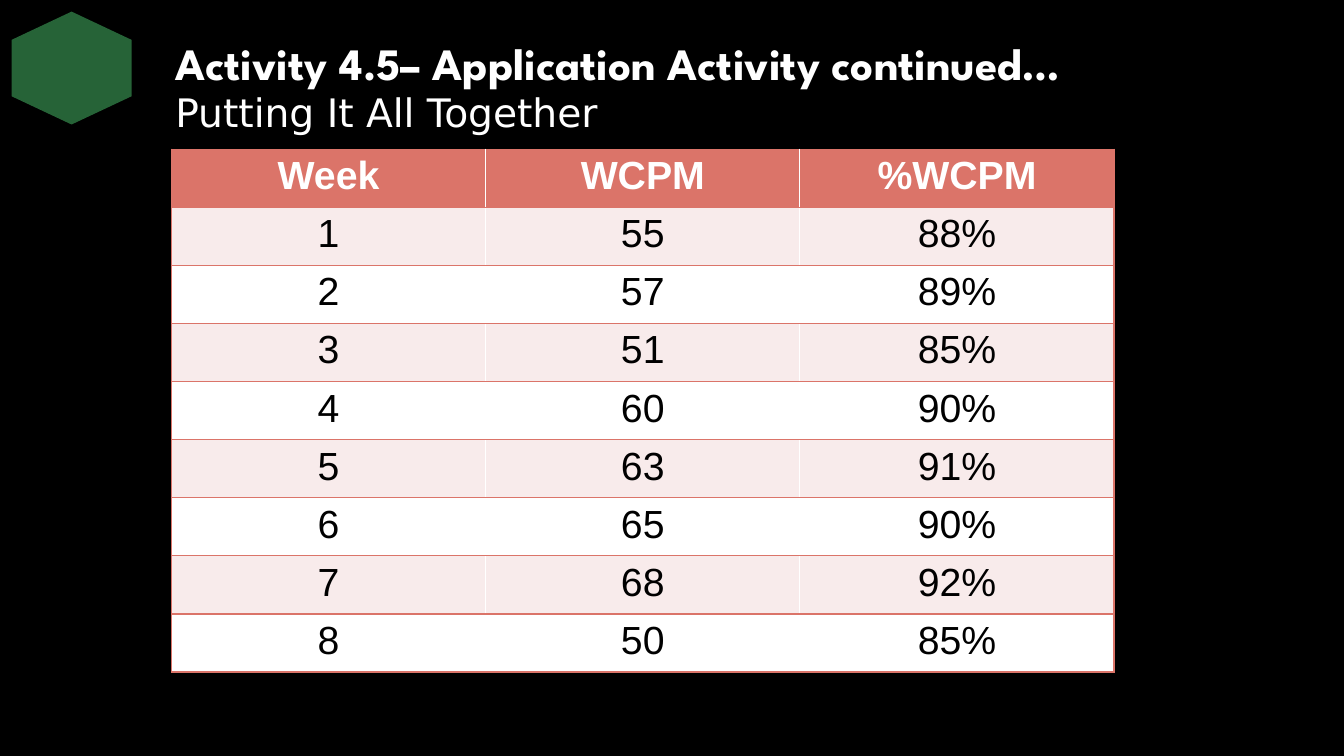
"""Build the Activity 4.5 slide with its weekly WCPM table."""
from lxml.etree import SubElement
from pptx import Presentation
from pptx.dml.color import RGBColor as RGB
from pptx.enum.shapes import MSO_SHAPE as SHAPE
from pptx.enum.text import MSO_ANCHOR as ANCHOR, MSO_AUTO_SIZE as AUTO, PP_ALIGN as ALIGN
from pptx.oxml.ns import qn
from pptx.util import Inches, Pt

COLORS = {"black": "000000", "white": "FFFFFF", "green": "266337",
          "coral": "DB7469", "blush": "F8EBEB"}
ROWS = [("Week", "WCPM", "%WCPM"),
        ("1", "55", "88%"), ("2", "57", "89%"), ("3", "51", "85%"),
        ("4", "60", "90%"), ("5", "63", "91%"), ("6", "65", "90%"),
        ("7", "68", "92%"), ("8", "50", "85%")]
COL_W, ROW_H = 9.35 / 3, 5.19 / 9


def style(p, font, size, color, bold=False):
    f = p.runs[0].font
    f.name, f.size, f.bold = font, Pt(size), bold
    f.color.rgb = RGB.from_string(COLORS[color])


def add_border(cell, side):
    ln = SubElement(cell._tc.get_or_add_tcPr(), qn(f"a:ln{side}"), w=str(Pt(1)))
    SubElement(SubElement(ln, qn("a:solidFill")), qn("a:srgbClr"), val=COLORS["coral"])


prs = Presentation()
prs.slide_width, prs.slide_height = Inches(13.33), Inches(7.5)
s = prs.slides.add_slide(prs.slide_layouts[5])
s.background.fill.solid()
s.background.fill.fore_color.rgb = RGB.from_string(COLORS["black"])

sp = s.shapes.add_shape(SHAPE.HEXAGON, Inches(0.15), Inches(0.08), Inches(1.12), Inches(1.19))
sp.rotation = 270
sp.shadow.inherit = False
sp.fill.solid()
sp.fill.fore_color.rgb = RGB.from_string(COLORS["green"])
sp.line.fill.background()

title = s.shapes.title
title.left, title.top, title.width, title.height = map(Inches, (1.64, 0.19, 11.42, 0.8))
subtitle = s.shapes.add_textbox(Inches(1.64), Inches(0.78), Inches(11.42), Inches(0.8))
for sp, text, font, size, bold, anchor in [
        (title, "Activity 4.5– Application Activity continued…", "League Spartan", 32, True,
         ANCHOR.MIDDLE),
        (subtitle, "Putting It All Together", "DejaVu Sans", 28, False, ANCHOR.TOP)]:
    tf = sp.text_frame
    tf.text = text
    tf.word_wrap, tf.auto_size, tf.vertical_anchor = True, AUTO.NONE, anchor
    p = tf.paragraphs[0]
    p.alignment, p.line_spacing = ALIGN.LEFT, 1.1
    style(p, font, size, "white", bold)

table = s.shapes.add_table(len(ROWS), 3, Inches(1.7), Inches(1.48),
                           Inches(3 * COL_W), Inches(len(ROWS) * ROW_H)).table
for col in table.columns:
    col.width = Inches(COL_W)
for i, values in enumerate(ROWS):
    table.rows[i].height = Inches(ROW_H)
    header = i == 0
    fill = "coral" if header else "blush" if i % 2 else "white"
    for j, value in enumerate(values):
        cell = table.cell(i, j)
        cell.text = value
        p = cell.text_frame.paragraphs[0]
        p.alignment = ALIGN.CENTER
        style(p, "Arial", 28, "white" if header else "black", header)
        for side in ("LTB", "TB", "RTB")[j]:
            add_border(cell, side)
        cell.fill.solid()
        cell.fill.fore_color.rgb = RGB.from_string(COLORS[fill])

prs.save("out.pptx")
